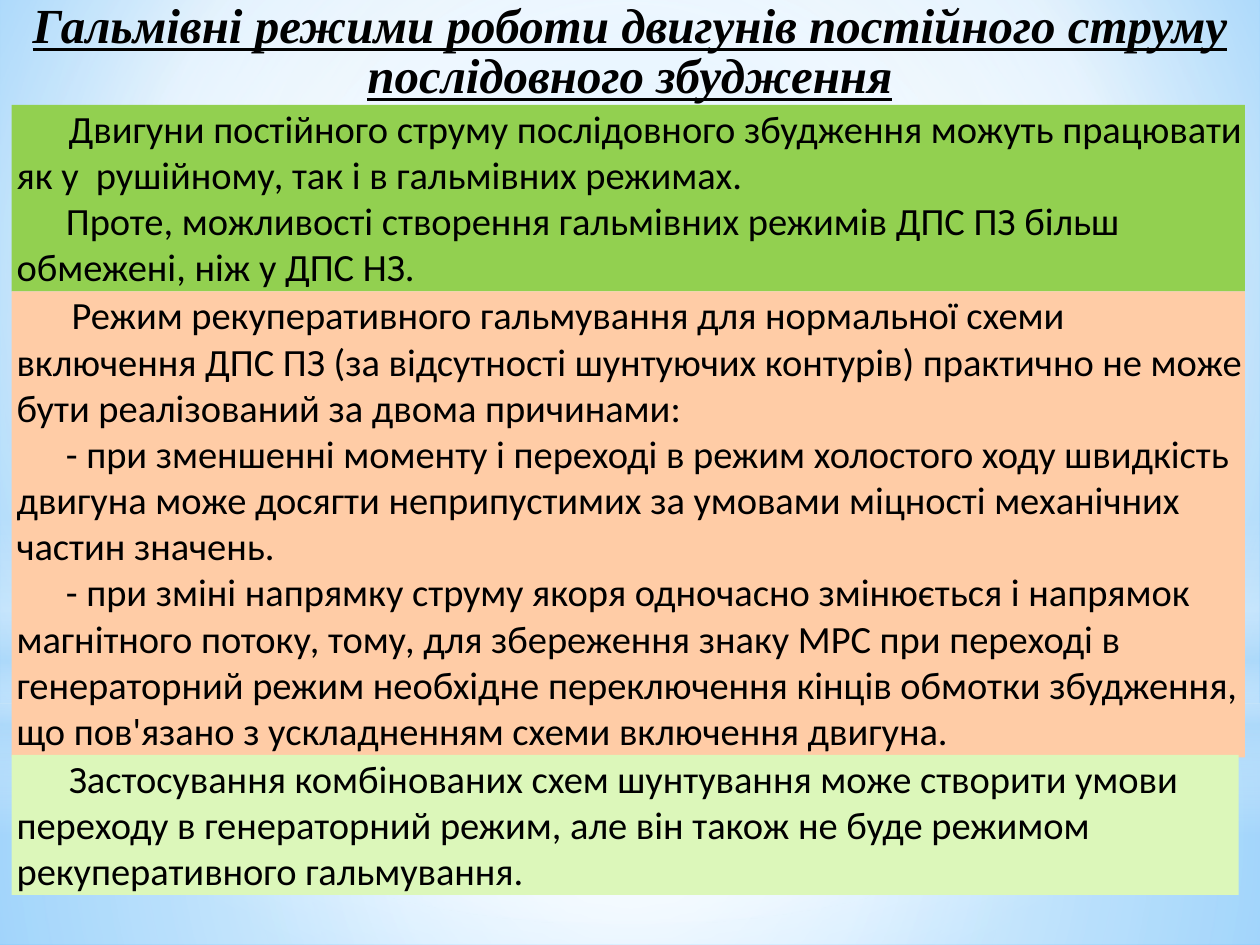
"""Build the slide on braking modes of series-wound DC motors."""
import lxml.etree
import pptx
import pptx.dml.color
import pptx.enum.shapes
import pptx.enum.text
import pptx.oxml.ns
import pptx.util

Pt = pptx.util.Pt
RGBColor = pptx.dml.color.RGBColor
MSO_SHAPE = pptx.enum.shapes.MSO_SHAPE
qn = pptx.oxml.ns.qn

BLACK = RGBColor(0x00, 0x00, 0x00)
WHITE = RGBColor(0xFF, 0xFF, 0xFF)
GREEN = RGBColor(0x92, 0xD0, 0x50)
PEACH = RGBColor(0xFF, 0xCC, 0xA6)
LIME = RGBColor(0xDC, 0xF7, 0xBA)
HAZE = RGBColor(0xB4, 0xDC, 0xFA)
SKY = RGBColor(0x9E, 0xD5, 0xFF)
AZURE = RGBColor(0x5B, 0xB9, 0xFF)

WIDTH, HEIGHT = 720, 540
CENTRE = (50, 50, 50, 50)
BACKDROP_STOPS = [(0, SKY, 100), (60, WHITE, 100), (100, AZURE, 100)]
BACKDROP_FOCUS = (20, 10, 20, 60)

GLOWS = [
    (MSO_SHAPE.RECTANGLE, 401.8, 138.2, CENTRE,
     [(0, WHITE, 91), (37, WHITE, 76), (100, HAZE, 79)]),
    (MSO_SHAPE.RECTANGLE, 0, 401.8, CENTRE,
     [(0, WHITE, 89), (48, WHITE, 62), (100, HAZE, 79)]),
    (MSO_SHAPE.RECTANGLE, 296.6, 180, None,
     [(0, WHITE, 0), (29, WHITE, 30), (45, HAZE, 40),
      (55, WHITE, 26), (65, HAZE, 60), (100, WHITE, 0)]),
    (MSO_SHAPE.OVAL, 126, 401.8, CENTRE,
     [(0, WHITE, 100), (56, WHITE, 0)]),
]

TITLE = "Гальмівні режими роботи двигунів постійного струму послідовного збудження"
PANEL_LEFT = 6.6
PANELS = [
    (GREEN, 59.9, 704.8, 106.6, [
        (29.8, "Двигуни постійного струму послідовного збудження можуть працювати як у  рушійному, так і в гальмівних режимах."),
        (28.2, "Проте, можливості створення гальмівних режимів ДПС ПЗ більш обмежені, ніж у ДПС НЗ."),
    ]),
    (PEACH, 166.5, 704.8, 266.4, [
        (31.5, "Режим рекуперативного гальмування для нормальної схеми включення ДПС ПЗ (за відсутності шунтуючих контурів) практично не може бути реалізований за двома причинами:"),
        (28.2, "- при зменшенні моменту і переході в режим холостого ходу швидкість двигуна може досягти неприпустимих за умовами міцності механічних частин значень."),
        (28.2, "- при зміні напрямку струму якоря одночасно змінюється і напрямок магнітного потоку, тому, для збереження знаку МРС при переході в генераторний режим необхідне переключення кінців обмотки збудження, що пов'язано з ускладненням схеми включення двигуна."),
    ]),
    (LIME, 431.4, 701.2, 80, [
        (29.8, "Застосування комбінованих схем шунтування може створити умови переходу в генераторний режим, але він також не буде режимом рекуперативного гальмування."),
    ]),
]


def set_gradient(fill, owner, stops, focus):
    """Replace the solid fill of owner by a circular or a vertical gradient."""
    fill.solid()
    fill.fore_color.rgb = WHITE
    solid = owner.find(qn("a:solidFill"))
    gradient = lxml.etree.Element(qn("a:gradFill"), rotWithShape="1")
    stop_list = lxml.etree.SubElement(gradient, qn("a:gsLst"))
    for position, color, opacity in stops:
        stop = lxml.etree.SubElement(stop_list, qn("a:gs"), pos=str(position * 1000))
        tint = lxml.etree.SubElement(stop, qn("a:srgbClr"), val=str(color))
        if opacity < 100:
            lxml.etree.SubElement(tint, qn("a:alpha"), val=str(opacity * 1000))
    if focus:
        circle = lxml.etree.SubElement(gradient, qn("a:path"), {"path": "circle"})
        edges = {side: str(value * 1000) for side, value in zip("ltrb", focus)}
        lxml.etree.SubElement(circle, qn("a:fillToRect"), edges)
    else:
        lxml.etree.SubElement(gradient, qn("a:lin"), ang="5400000", scaled="0")
    owner.replace(solid, gradient)


def add_plain_shape(slide, preset, left, top, width, height):
    """Add a shape without shadow or outline."""
    shape = slide.shapes.add_shape(preset, Pt(left), Pt(top), Pt(width), Pt(height))
    shape.shadow.inherit = False
    shape.line.fill.background()
    return shape


def prepare_frame(frame, left_inset):
    """Let the text wrap from the top, with an inset on the left only."""
    frame.word_wrap = True
    frame.vertical_anchor = pptx.enum.text.MSO_ANCHOR.TOP
    frame.margin_left = Pt(left_inset)
    frame.margin_top = frame.margin_right = frame.margin_bottom = 0


def style_font(font, name, size):
    """Give a font its name and size in black."""
    font.name, font.size = name, Pt(size)
    font.color.rgb = BLACK


def add_title(slide):
    """Add the centred heading."""
    title = slide.shapes.add_textbox(Pt(8.6), Pt(2.2), Pt(702.7), Pt(57.6))
    prepare_frame(title.text_frame, 0)
    heading = title.text_frame.paragraphs[0]
    heading.text = TITLE
    heading.alignment = pptx.enum.text.PP_ALIGN.CENTER
    heading.line_spacing = 0.85
    font = heading.runs[0].font
    style_font(font, "Times New Roman", 28)
    font.bold = font.italic = font.underline = True


def add_panel(slide, color, top, width, height, passages):
    """Add a coloured panel of paragraphs with first-line indents."""
    panel = add_plain_shape(slide, MSO_SHAPE.RECTANGLE, PANEL_LEFT, top, width, height)
    panel.fill.solid()
    panel.fill.fore_color.rgb = color
    frame = panel.text_frame
    prepare_frame(frame, 2.9)
    frame.text = "\n".join(text for _, text in passages)
    for paragraph, (indent, _) in zip(frame.paragraphs, passages):
        paragraph.alignment = pptx.enum.text.PP_ALIGN.LEFT
        properties = paragraph._p.get_or_add_pPr()
        properties.set("marL", "0")
        properties.set("indent", str(int(Pt(indent))))
        style_font(paragraph.runs[0].font, "Calibri", 22)


def main():
    """Assemble and save the slide."""
    deck = pptx.Presentation()
    deck.slide_width, deck.slide_height = Pt(WIDTH), Pt(HEIGHT)
    slide = deck.slides.add_slide(deck.slide_layouts[6])
    backdrop = slide.background.fill
    set_gradient(backdrop, slide.element.find(".//" + qn("p:bgPr")),
                 BACKDROP_STOPS, BACKDROP_FOCUS)
    for preset, top, height, focus, stops in GLOWS:
        glow = add_plain_shape(slide, preset, 0, top, WIDTH, height)
        set_gradient(glow.fill, glow.element.spPr, stops, focus)
    add_panel(slide, *PANELS[0])
    add_title(slide)
    for panel in PANELS[1:]:
        add_panel(slide, *panel)
    deck.save("out.pptx")


if __name__ == "__main__":
    main()
